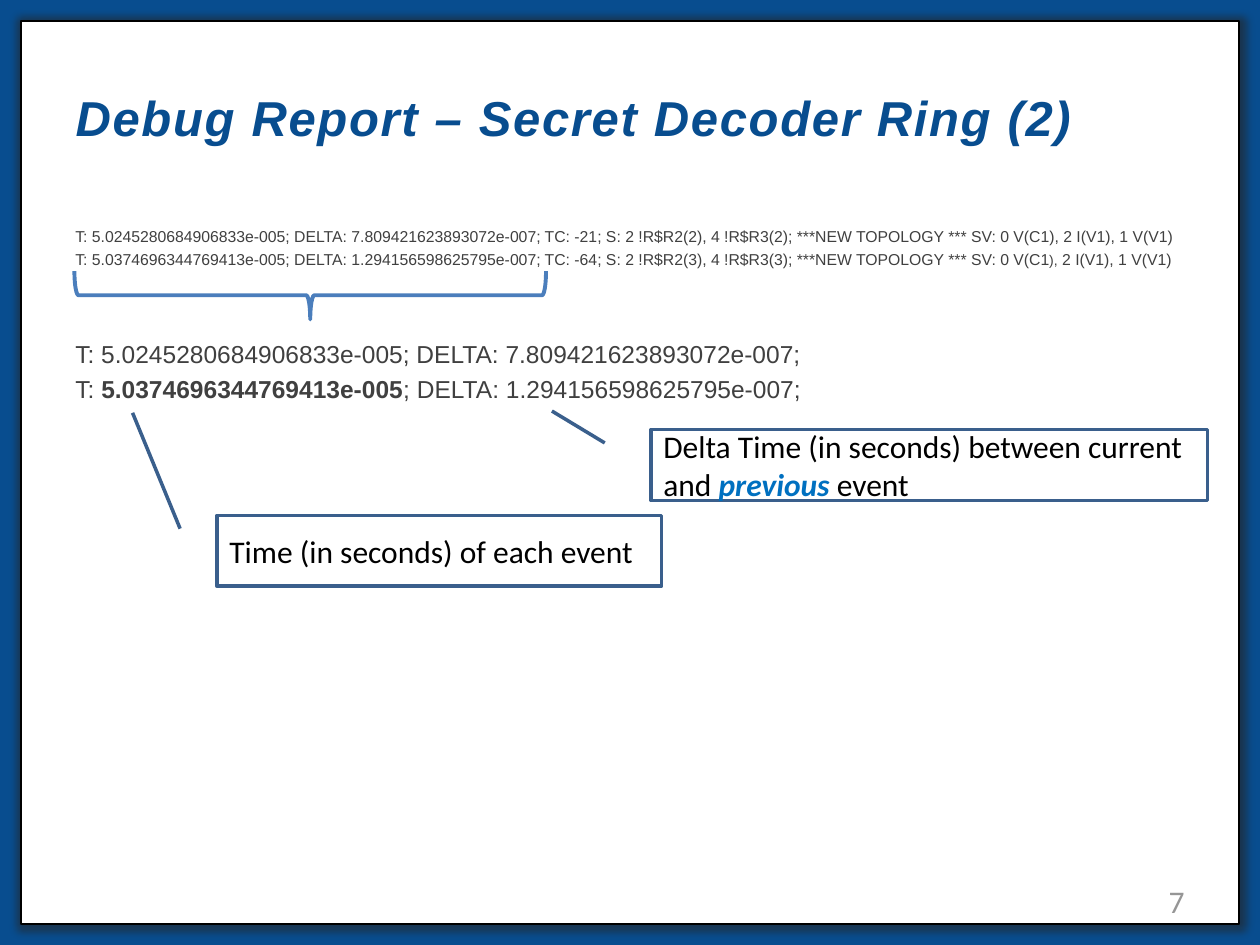
from lxml.etree import SubElement
from pptx import Presentation
from pptx.dml.color import RGBColor
from pptx.enum.shapes import MSO_SHAPE
from pptx.enum.text import MSO_ANCHOR, MSO_AUTO_SIZE, PP_ALIGN
from pptx.oxml.ns import qn
from pptx.util import Pt

NAVY = RGBColor(0x08, 0x4D, 0x8F)
DARK = RGBColor(0x26, 0x26, 0x26)
STEEL = RGBColor(0x3A, 0x5F, 0x8C)
BLUE = RGBColor(0x4B, 0x7E, 0xBC)
SKY = RGBColor(0x00, 0x70, 0xC0)
GRAY = RGBColor(0x40, 0x40, 0x40)
PALE = RGBColor(0x96, 0x96, 0x96)
WHITE = RGBColor(0xFF, 0xFF, 0xFF)
BLACK = RGBColor(0x00, 0x00, 0x00)

TIMES = [
    "T: 5.0245280684906833e-005; DELTA: 7.809421623893072e-007;",
    "; DELTA: 1.294156598625795e-007;",
]
STAMP = "5.0374696344769413e-005"


def add_run(para, text, size, color, face="Arial", bold=False, slant=False):
    """Add one formatted run to a paragraph."""
    run = para.add_run()
    run.text = text
    font = run.font
    font.name, font.size = face, Pt(size)
    font.bold, font.italic = bold, slant
    font.color.rgb = color
    return run


def add_form(slide, kind, box, fill=None, line=None, width=0):
    """Add a preset shape with the given fill and outline."""
    form = slide.shapes.add_shape(kind, *map(Pt, box))
    form.shadow.inherit = False
    if fill is None:
        form.fill.background()
    else:
        form.fill.solid()
        form.fill.fore_color.rgb = fill
    if line is None:
        form.line.fill.background()
    else:
        form.line.color.rgb = line
        form.line.width = Pt(width)
    return form


def add_box(slide, box):
    """Add a wrapping text box and return its frame."""
    frame = slide.shapes.add_textbox(*map(Pt, box)).text_frame
    frame.word_wrap = True
    return frame


def add_frame(slide):
    """Draw the blue border, its soft shade and the white page."""
    rect = MSO_SHAPE.RECTANGLE
    add_form(slide, rect, (0, 0, 720, 540), NAVY)
    shade = add_form(slide, rect, (5, 5, 713, 533), DARK, STEEL, 2)
    props = shade.fill._xPr
    tint = props.find(qn("a:solidFill"))[0]
    SubElement(tint, qn("a:alpha")).set("val", "60000")
    soft = SubElement(props.find(qn("a:effectLst")), qn("a:softEdge"))
    soft.set("rad", str(Pt(5)))
    add_form(slide, rect, (12, 12, 696, 516), WHITE, BLACK, 0.75)


def set_title(slide, text):
    """Place and format the title above the frame."""
    title = slide.shapes.title
    slide.shapes._spTree.append(title._element)
    title.left, title.top = Pt(36), Pt(21.6)
    title.width, title.height = Pt(648), Pt(90)
    frame = title.text_frame
    frame.auto_size = MSO_AUTO_SIZE.NONE
    frame.vertical_anchor = MSO_ANCHOR.MIDDLE
    para = frame.paragraphs[0]
    para.alignment = PP_ALIGN.LEFT
    run = add_run(para, text, 28, NAVY, bold=True, slant=True)
    run._r.get_or_add_rPr().set("spc", "100")


def add_report(slide):
    """Write the two full report lines and their enlarged starts."""
    first, rest = TIMES
    lines = [
        (0, [(first + " TC: -21; S: 2 !R$R2(2), 4 !R$R3(2); "
              "***NEW TOPOLOGY *** SV: 0 V(C1), 2 I(V1), 1 V(V1)", 9, False)]),
        (2.1, [("T: " + STAMP + rest + " TC: -64; S: 2 !R$R2(3), 4 !R$R3(3); "
                "***NEW TOPOLOGY *** SV: 0 V(C1", 9, False),
               ("),", 8, False), (" 2 I(V1), 1 V(V1)", 9, False)]),
        (40.5, [(first, 14, False)]),
        (3.2, [("T: ", 14, False), (STAMP, 14, True), (rest, 14, False)]),
    ]
    frame = add_box(slide, (36, 126, 648, 318))
    for i, (gap, runs) in enumerate(lines):
        para = frame.add_paragraph() if i else frame.paragraphs[0]
        para.space_before = Pt(gap)
        for text, size, bold in runs:
            add_run(para, text, size, GRAY, bold=bold)


def add_brace(slide):
    """Draw the brace under the time columns."""
    box = (163.5, 34, 27.5, 269.5)
    brace = add_form(slide, MSO_SHAPE.RIGHT_BRACE, box, None, BLUE, 2.25)
    brace.rotation = 90


def add_note(slide, box, tip, runs):
    """Add a callout whose leader ends at the given tip ratios."""
    note = add_form(slide, MSO_SHAPE.LINE_CALLOUT_1, box, None, STEEL, 2)
    for i, value in enumerate((0.188, -0.083, *tip)):
        note.adjustments[i] = value
    frame = note.text_frame
    frame.word_wrap = True
    frame.vertical_anchor = MSO_ANCHOR.MIDDLE
    para = frame.paragraphs[0]
    para.alignment = PP_ALIGN.LEFT
    for text, color, strong in runs:
        add_run(para, text, 18, color, "Calibri", strong, strong)


def add_page(slide, text):
    """Write the page number."""
    frame = add_box(slide, (516, 500.5, 168, 29))
    frame.vertical_anchor = MSO_ANCHOR.MIDDLE
    para = frame.paragraphs[0]
    para.alignment = PP_ALIGN.RIGHT
    add_run(para, text, 18, PALE, "Calibri")


def main():
    """Build the slide and save it."""
    deck = Presentation()
    deck.slide_width, deck.slide_height = Pt(720), Pt(540)
    slide = deck.slides.add_slide(deck.slide_layouts[5])
    add_frame(slide)
    add_page(slide, "7")
    set_title(slide, "Debug Report – Secret Decoder Ring (2)")
    add_report(slide)
    add_brace(slide)
    add_note(slide, (124, 294.5, 254, 40.5), (-1.447, -0.19),
             [("Time (in seconds) of each event", BLACK, False)])
    add_note(slide, (372, 245.5, 318, 40.5), (-0.263, -0.178),
             [("Delta Time (in seconds) between current and ", BLACK, False),
              ("previous", SKY, True), (" event", BLACK, False)])
    deck.save("out.pptx")


if __name__ == "__main__":
    main()
